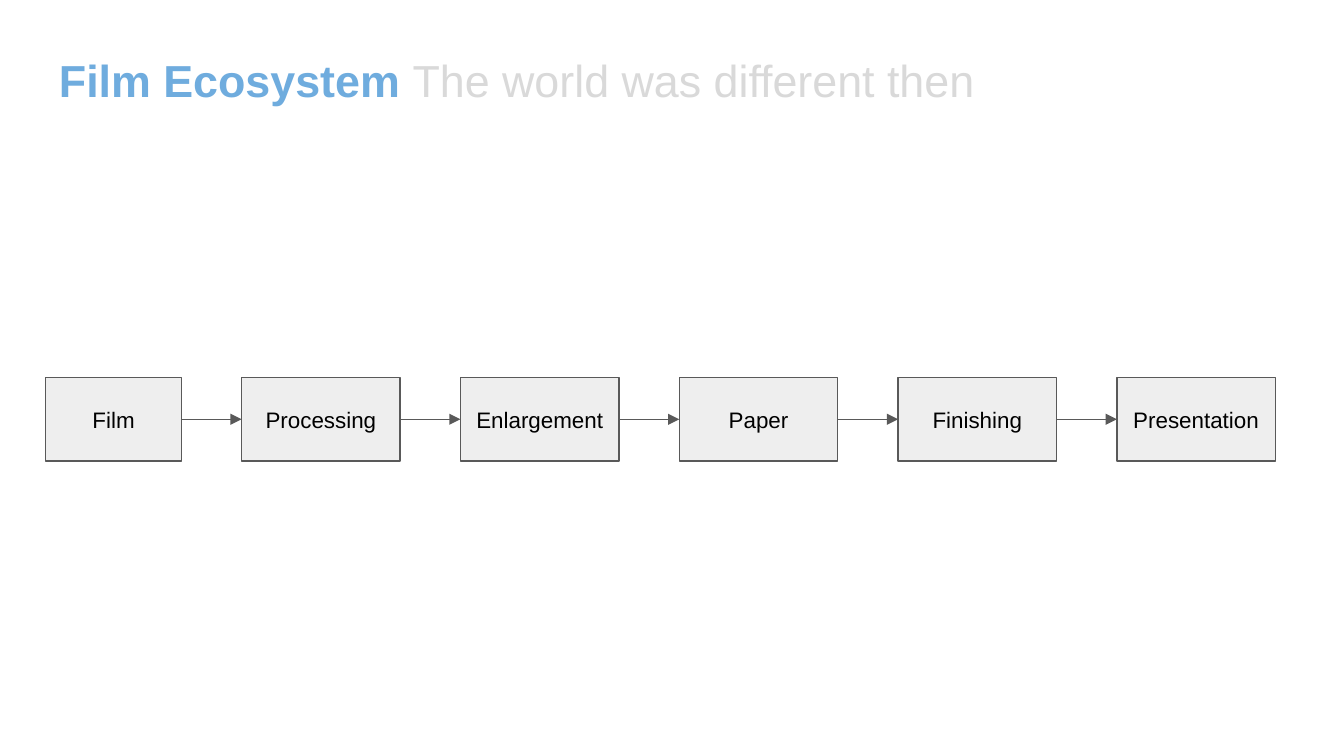
from dataclasses import dataclass

from lxml.etree import SubElement
from pptx import Presentation
from pptx.dml.color import RGBColor as Rgb
from pptx.enum.shapes import MSO_CONNECTOR as Connector, MSO_SHAPE as Shape
from pptx.enum.text import MSO_ANCHOR as Anchor, PP_ALIGN as Align
from pptx.oxml.ns import qn
from pptx.util import Inches, Pt


@dataclass(frozen=True)
class Theme:
    font: str = "Arial"
    accent: str = "6FACDE"
    muted: str = "D9D9D9"
    text: str = "000000"
    fill: str = "EEEEEE"
    line: str = "595959"
    title_size: float = 24
    label_size: float = 12
    line_width: float = 0.75
    inset: float = 0.1


def add_text(para, text, *, font, size, color, bold=False):
    span = para.add_run()
    span.text = text
    span.font.name = font
    span.font.size = Pt(size)
    span.font.bold = bold
    span.font.color.rgb = Rgb.from_string(color)


class PageBuilder:
    RIGHT, LEFT = 3, 1

    def __init__(self, page, theme):
        self.page = page
        self.theme = theme

    def prepare_frame(self, box, anchor):
        frame = box.text_frame
        frame.word_wrap = True
        frame.vertical_anchor = anchor
        frame.margin_left = frame.margin_right = Inches(self.theme.inset)
        frame.margin_top = frame.margin_bottom = Inches(self.theme.inset)
        return frame.paragraphs[0]

    def style_line(self, line):
        line.color.rgb = Rgb.from_string(self.theme.line)
        line.width = Pt(self.theme.line_width)

    def title(self, heading, tagline, left, top, width, height):
        theme = self.theme
        box = self.page.shapes.add_textbox(
            Inches(left), Inches(top), Inches(width), Inches(height))
        para = self.prepare_frame(box, Anchor.BOTTOM)
        add_text(para, heading + " ", font=theme.font, size=theme.title_size,
                 color=theme.accent, bold=True)
        add_text(para, tagline, font=theme.font, size=theme.title_size,
                 color=theme.muted)

    def step(self, label, left, top, width, height):
        theme = self.theme
        box = self.page.shapes.add_shape(
            Shape.RECTANGLE, Inches(left), Inches(top), Inches(width), Inches(height))
        box.shadow.inherit = False
        box.fill.solid()
        box.fill.fore_color.rgb = Rgb.from_string(theme.fill)
        self.style_line(box.line)
        para = self.prepare_frame(box, Anchor.MIDDLE)
        para.alignment = Align.CENTER
        add_text(para, label, font=theme.font, size=theme.label_size, color=theme.text)
        return box

    def arrow(self, source, target):
        link = self.page.shapes.add_connector(Connector.STRAIGHT, 0, 0, 0, 0)
        link.begin_connect(source, self.RIGHT)
        link.end_connect(target, self.LEFT)
        self.style_line(link.line)
        properties = link._element.spPr
        SubElement(properties.find(qn("a:ln")), qn("a:tailEnd"), type="triangle")
        SubElement(properties, qn("a:effectLst"))


def main():
    # Widescreen deck, 16:9
    deck = Presentation()
    deck.slide_width = Inches(10)
    deck.slide_height = Inches(10 * 9 / 16)
    page = deck.slides.add_slide(deck.slide_layouts[6])
    builder = PageBuilder(page, Theme())

    # Title
    builder.title("Film Ecosystem", "The world was different then", 0.34, 0.27, 9.11, 0.62)

    # Process chain: a narrower first step, then equal widths and gaps
    steps = ["Film", "Processing", "Enlargement", "Paper", "Finishing", "Presentation"]
    left, right = 0.34, 9.49
    widths = [1.01] + [1.18] * (len(steps) - 1)
    gap = (right - left - sum(widths)) / (len(steps) - 1)
    previous = None
    for label, width in zip(steps, widths):
        box = builder.step(label, left, 2.81, width, 0.62)
        if previous:
            builder.arrow(previous, box)
        previous = box
        left += width + gap

    deck.save("out.pptx")


if __name__ == "__main__":
    main()
